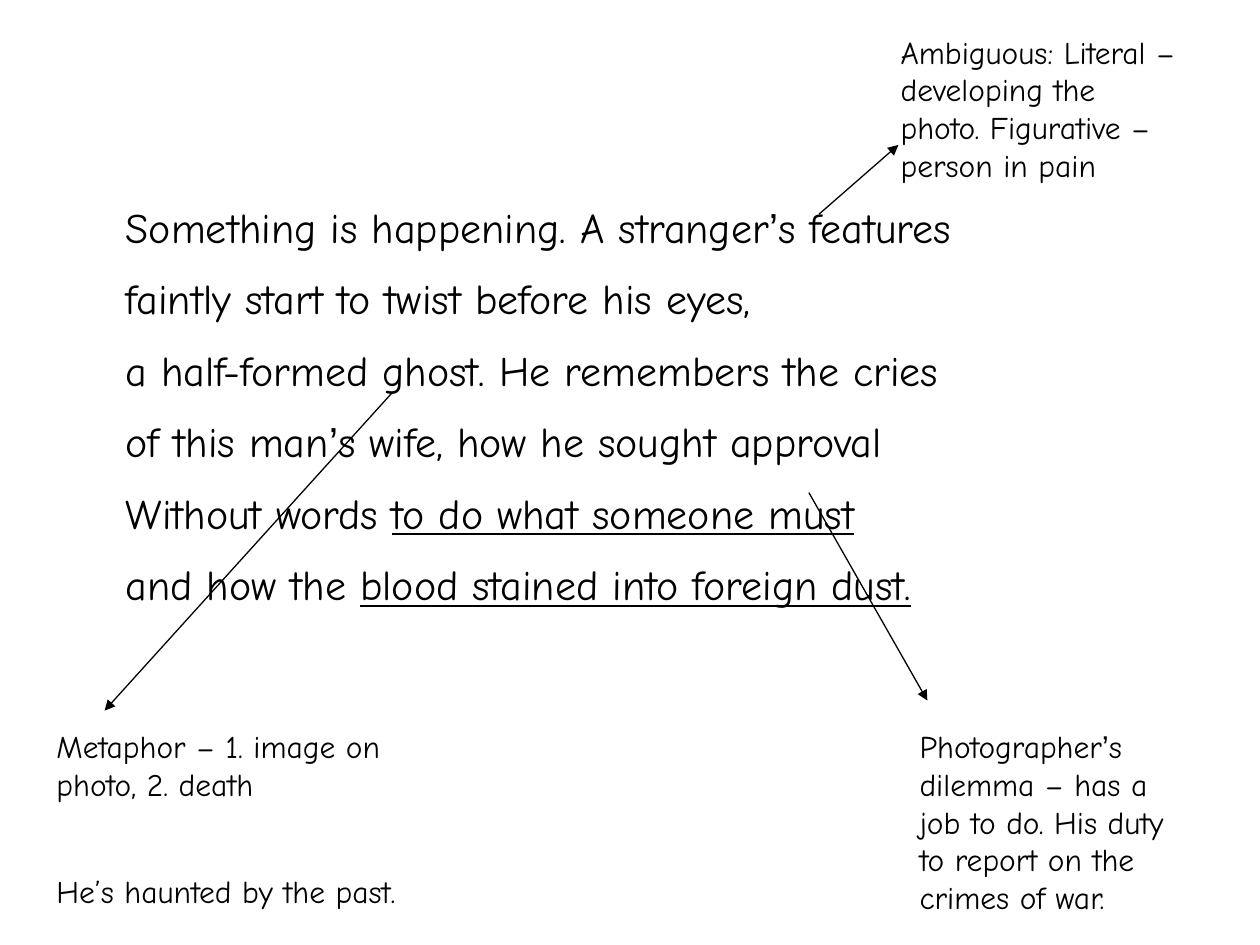
from dataclasses import dataclass

from lxml import etree
from pptx import Presentation
from pptx import util as u
from pptx.dml.color import RGBColor
from pptx.enum import shapes, text
from pptx.oxml import ns

PX = 9144  # EMU in one px, at 100 px to the inch


@dataclass(frozen=True)
class Theme:
    ink: RGBColor = RGBColor(0, 0, 0)
    face: str = "Comic Neue"
    mark: str = "Arial"  # face of the curly apostrophes
    poem: int = 24
    note: int = 18
    line: float = 0.75


@dataclass(frozen=True)
class Bit:
    text: str
    face: str = Theme.face
    under: bool = False


@dataclass(frozen=True)
class Para:
    bits: tuple[Bit, ...]
    gap: float = 0.5  # space before, as a share of the type size


@dataclass(frozen=True)
class Block:
    box: tuple[int, int, int, int]
    size: int
    paras: tuple[Para, ...]


@dataclass(frozen=True)
class Arrow:
    start: tuple[int, int]
    end: tuple[int, int]


THEME = Theme()
APOS = Bit("’", THEME.mark)


def para(*bits: str | Bit, gap: float = 0.5) -> Para:
    return Para(tuple(b if isinstance(b, Bit) else Bit(b) for b in bits), gap)


# Poem lines
POEM = Block((90, 155, 788, 353), THEME.poem, (
    para("Something is happening. A stranger", APOS, "s features"),
    para("faintly start to twist before his eyes,"),
    para("a half-formed ghost. He remembers the cries"),
    para("of this man", APOS, "s wife, how he sought approval"),
    para("Without words ", Bit("to do what someone must", under=True)),
    para("and how the ", Bit("blood stained into foreign dust.", under=True)),
))

# Notes around the poem
NOTES = (
    Block((705, 21, 244, 130), THEME.note, (
        para("Ambiguous: Literal – developing the photo. Figurative – person in pain"),
    )),
    Block((35, 572, 347, 162), THEME.note, (
        para("Metaphor – 1. image on photo, 2. death"),
        para("He’s haunted by the past.", gap=2.2),
    )),
    Block((720, 572, 236, 162), THEME.note, (
        para("Photographer", APOS, "s dilemma – has a job to do. "
             "His duty to report on the crimes of war."),
    )),
)

# Arrows from poem words to notes
ARROWS = (
    Arrow((650, 170), (713, 115)),
    Arrow((311, 312), (83, 564)),
    Arrow((642, 391), (736, 556)),
)


def draw_block(slide, block: Block) -> None:
    frame = slide.shapes.add_textbox(*(n * PX for n in block.box)).text_frame
    frame.word_wrap = True
    frame.auto_size = text.MSO_AUTO_SIZE.SHAPE_TO_FIT_TEXT
    for i, item in enumerate(block.paras):
        par = frame.add_paragraph() if i else frame.paragraphs[0]
        par.space_before = u.Pt(block.size * item.gap)
        for bit in item.bits:
            run = par.add_run()
            run.text = bit.text
            font = run.font
            font.name, font.size = bit.face, u.Pt(block.size)
            font.color.rgb = THEME.ink
            font.underline = bit.under


def draw_arrow(slide, arrow: Arrow) -> None:
    ends = (n * PX for n in arrow.start + arrow.end)
    link = slide.shapes.add_connector(shapes.MSO_CONNECTOR.STRAIGHT, *ends)
    link.line.color.rgb = THEME.ink
    link.line.width = u.Pt(THEME.line)
    props = link.line._get_or_add_ln()
    etree.SubElement(props, ns.qn("a:tailEnd"), type="triangle")
    etree.SubElement(props.getparent(), ns.qn("a:effectLst"))


def main() -> None:
    deck = Presentation()
    deck.slide_width, deck.slide_height = 1000 * PX, 750 * PX
    slide = deck.slides.add_slide(deck.slide_layouts[6])
    for block in (POEM, *NOTES):
        draw_block(slide, block)
    for arrow in ARROWS:
        draw_arrow(slide, arrow)
    deck.save("out.pptx")


if __name__ == "__main__":
    main()
